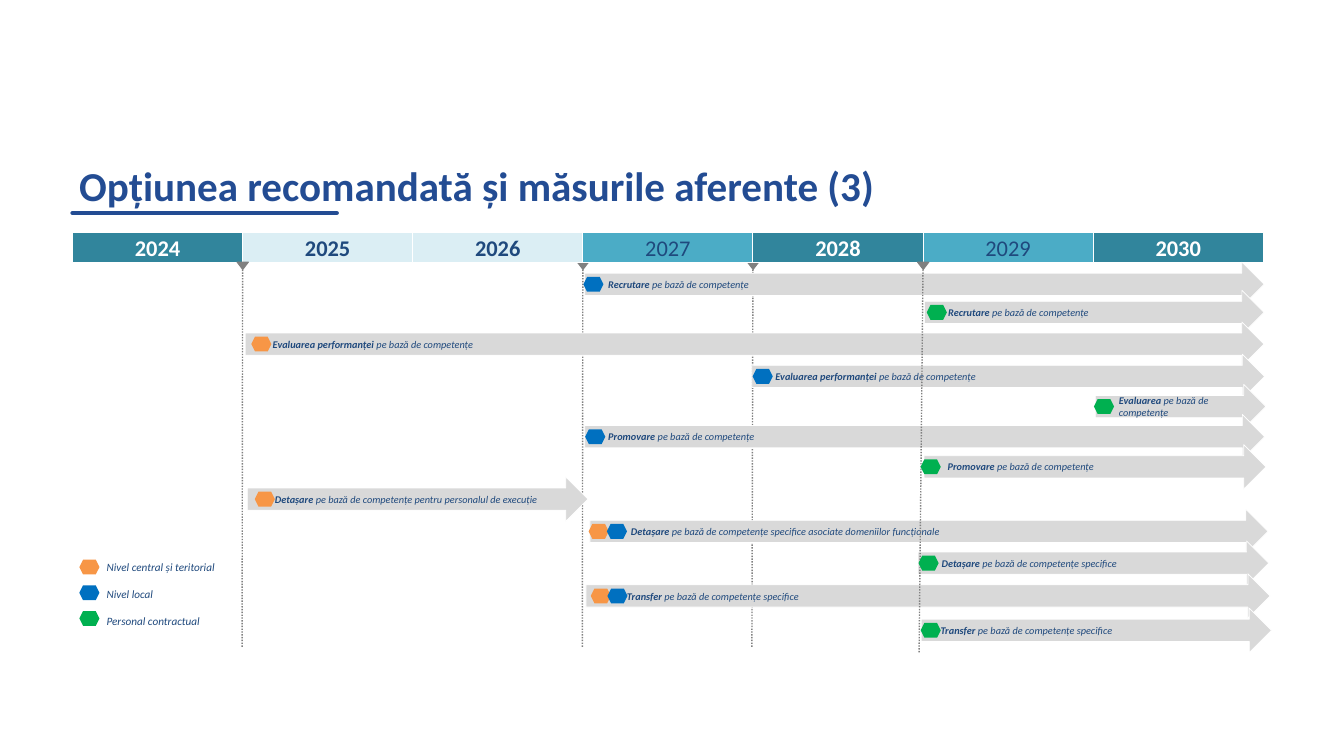
"""Builds the timeline slide of recommended measures for 2024-2030."""
from lxml.etree import SubElement
from pptx import Presentation
from pptx.dml.color import RGBColor
from pptx.enum.dml import MSO_LINE
from pptx.enum.shapes import MSO_CONNECTOR, MSO_SHAPE
from pptx.enum.text import MSO_ANCHOR, PP_ALIGN
from pptx.oxml.ns import qn
from pptx.util import Cm, Pt

C = {"title": "234C93", "text": "1F497D", "white": "FFFFFF", "dark": "31859C",
     "mid": "4BACC6", "pale": "DBEEF4", "arrow": "D9D9D9", "guide": "808080",
     "central": "F79646", "local": "0070C0", "contract": "00B050"}

TITLE = "Opțiunea recomandată și măsurile aferente (3)"
YEARS = [("2024", "dark", "white", True), ("2025", "pale", "text", True),
         ("2026", "pale", "text", True), ("2027", "mid", "text", False),
         ("2028", "dark", "white", True), ("2029", "mid", "text", False),
         ("2030", "dark", "white", True)]
LEGEND = [("central", "Nivel central și teritorial"), ("local", "Nivel local"),
          ("contract", "Personal contractual")]
BASE = "pe bază de competențe"
# left, top, right, indent, [(level, marker left)], bold text, plain text
MEASURES = [
    (22.1, 9.91, 47.78, 0.64, [("local", 22.05)], "Recrutare ", BASE),
    (34.95, 10.97, 47.78, 0.64, [("contract", 35.03)], "Recrutare ", BASE),
    (9.27, 12.17, 47.78, 0.79, [("central", 9.5)], "Evaluarea performanței ", BASE),
    (28.42, 13.39, 47.8, 0.64, [("local", 28.45)], "Evaluarea performanței ", BASE),
    (41.4, 14.53, 47.85, 0.64, [("contract", 41.35)], "Evaluarea ", BASE),
    (22.1, 15.67, 47.8, 0.64, [("local", 22.12)], "Promovare ", BASE),
    (34.93, 16.81, 47.85, 0.64, [("contract", 34.8)], "Promovare ", BASE),
    (9.35, 18.03, 22.23, 0.79, [("central", 9.63)], "Detașare ",
     BASE + " pentru personalul de execuție"),
    (22.3, 19.25, 47.93, 1.3, [("central", 22.25), ("local", 22.94)], "Detașare ",
     BASE + " specifice asociate domeniilor funcționale"),
    (34.7, 20.45, 47.96, 0.64, [("contract", 34.72)], "Detașare ", BASE + " specifice"),
    (22.15, 21.69, 48.01, 1.3, [("central", 22.33), ("local", 22.96)], "Transfer ",
     BASE + " specifice"),
    (34.82, 22.99, 48.06, 0.48, [("contract", 34.8)], "Transfer ", BASE + " specifice"),
]
X0, COL, BAR_TOP, BAR_H = 2.74, 6.43, 8.79, 1.12
ARROW_H, HEX_W, HEX_H = 1.68, 0.76, 0.56

prs = Presentation()
prs.slide_width, prs.slide_height = Cm(50.8), Cm(28.58)
s = prs.slides.add_slide(prs.slide_layouts[5])


def write(p, text, size=11, color="text", bold=False, italic=False, align=None):
    r = p.add_run()
    r.text = text
    f = r.font
    f.name, f.size, f.bold, f.italic = "Calibri", Pt(size), bold, italic
    f.color.rgb = RGBColor.from_string(C[color])
    if align is not None:
        p.alignment = align


def shape(kind, x, y, w, h, fill, line=None, width=1):
    sp = s.shapes.add_shape(kind, Cm(x), Cm(y), Cm(w), Cm(h))
    sp.shadow.inherit = False
    sp.fill.solid()
    sp.fill.fore_color.rgb = RGBColor.from_string(C[fill])
    if line:
        sp.line.color.rgb = RGBColor.from_string(C[line])
        sp.line.width = Pt(width)
    else:
        sp.line.fill.background()
    sp.text_frame.word_wrap = True
    sp.text_frame.vertical_anchor = MSO_ANCHOR.MIDDLE
    return sp


def line(x1, y1, x2, y2, color, width, dash=None):
    cn = s.shapes.add_connector(MSO_CONNECTOR.STRAIGHT, Cm(x1), Cm(y1), Cm(x2), Cm(y2))
    cn.line.color.rgb = RGBColor.from_string(C[color])
    cn.line.width = Pt(width)
    if dash:
        cn.line.dash_style = dash
    else:
        cn._element.spPr.find(qn("a:ln")).set("cap", "rnd")
    SubElement(cn._element.spPr, qn("a:effectLst"))


def guide(col, drift, bottom=24.45):
    x, top = X0 + col * COL, BAR_TOP + BAR_H
    line(x - drift, bottom, x, top, "guide", 1.5, MSO_LINE.ROUND_DOT)
    shape(MSO_SHAPE.ISOSCELES_TRIANGLE, x - 0.21, top, 0.43, 0.28, "guide", "guide").rotation = 180


def marker(level, x, y):
    shape(MSO_SHAPE.HEXAGON, x, y, HEX_W, HEX_H, level)


title = s.shapes.title
title.left, title.top, title.width, title.height = Cm(X0), Cm(6.12), Cm(41.07), Cm(1.96)
title.text_frame.word_wrap = True
title.text_frame.vertical_anchor = MSO_ANCHOR.MIDDLE
p = title.text_frame.paragraphs[0]
p.line_spacing = 0.9
write(p, TITLE, size=44, color="title", bold=True, align=PP_ALIGN.LEFT)
line(X0, 8.05, 12.73, 8.05, "title", 4.5)

guide(4, 0.04)
guide(3, 0.02)
for i, (year, fill, color, bold) in enumerate(YEARS):
    sp = shape(MSO_SHAPE.RECTANGLE, X0 + i * COL, BAR_TOP, COL, BAR_H, fill, "white")
    write(sp.text_frame.paragraphs[0], year, size=24, color=color, bold=bold,
          align=PP_ALIGN.CENTER)

for left, top, right, indent, marks, lead, rest in MEASURES:
    sp = shape(MSO_SHAPE.RIGHT_ARROW, left, top, right - left, ARROW_H, "arrow", "white", 0.75)
    p = sp.text_frame.paragraphs[0]
    p._p.get_or_add_pPr().set("marL", str(Cm(indent)))
    write(p, lead, bold=True, italic=True, align=PP_ALIGN.LEFT)
    write(p, rest, italic=True)

guide(1, 0.02)
guide(5, 0.15, 24.66)
for left, top, right, indent, marks, lead, rest in MEASURES:
    for level, x in marks:
        marker(level, x, top + (ARROW_H - HEX_H) / 2)

tf = s.shapes.add_textbox(Cm(3.78), Cm(21.06), Cm(7.67), Cm(3.05)).text_frame
tf.word_wrap = True
for i, (level, label) in enumerate(LEGEND):
    marker(level, 3, 21.16 + i * 0.97)
    p = tf.add_paragraph() if i else tf.paragraphs[0]
    if i:
        p.space_before = Pt(14.5)
    write(p, label, size=12, italic=True)

prs.save("out.pptx")
